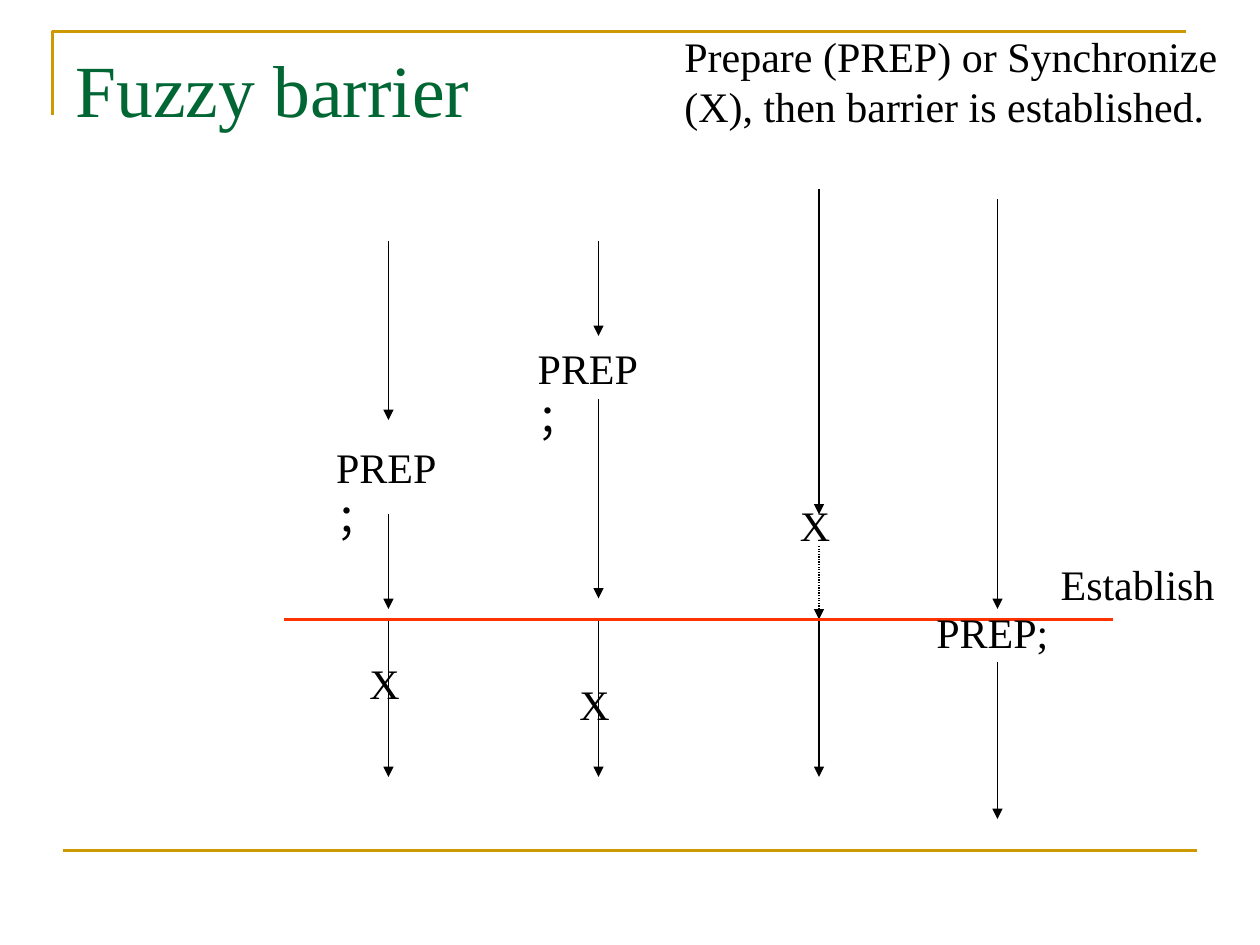
from lxml import etree
from pptx import Presentation
from pptx.dml.color import RGBColor
from pptx.enum.dml import MSO_LINE
from pptx.enum.shapes import MSO_CONNECTOR
from pptx.enum.text import MSO_ANCHOR, PP_ALIGN
from pptx.oxml.ns import qn
from pptx.util import Pt

STRAIGHT = MSO_CONNECTOR.STRAIGHT
DOT = MSO_LINE.ROUND_DOT
TOP = MSO_ANCHOR.TOP
LEFT = PP_ALIGN.LEFT

FONT = "Times New Roman"
HEX = {"gold": "CC9900", "green": "006633", "black": "000000", "red": "FF3300"}

TITLE = ("Fuzzy barrier", 36, 21.6, 648, 90)
FRAME = [(30, 66), (30, 18), (678, 18)]
FOOT = (36, 486, 684, 486)
WALL = 354
THREADS = [
    (222, [(138, 240), (294, 348), (WALL, 444)]),
    (342, [(138, 192), (228, 342), (WALL, 444)]),
    (468, [(108, 294), (WALL, 444)]),
    (570, [(114, 348), (378, 468)]),
]
WAIT = (468, 312, 468, WALL)
LABELS = [
    ("PREP；", 185, 249, 83.5, 36),
    ("PREP；", 300.2, 192, 83.5, 36),
    ("Establish", 599, 315.6, 102.2, 36),
    ("X", 204, 372, 31.7, 36),
    ("X", 450, 282, 31.7, 36),
    ("X", 324, 384, 31.7, 36),
    ("PREP;", 528, 343.2, 78.5, 36),
    ("Prepare (PREP) or Synchronize (X), then barrier is established.",
     384, 13.8, 321.8, 64.8),
]


def tint(name):
    """Return the named colour."""
    return RGBColor.from_string(HEX[name])


def write(shape, text, size=24, color="black", top=3.6):
    """Put formatted text into a shape."""
    frame = shape.text_frame
    frame.word_wrap = True
    frame.vertical_anchor = TOP
    frame.margin_top = Pt(top)
    par = frame.paragraphs[0]
    par.alignment = LEFT
    run = par.add_run()
    run.text = text
    run.font.name = FONT
    run.font.size = Pt(size)
    run.font.color.rgb = tint(color)


def draw(shapes, ends, color="black", width=0.75, head=True, dash=None):
    """Draw a straight line or arrow."""
    link = shapes.add_connector(STRAIGHT, *map(Pt, ends))
    link.line.color.rgb = tint(color)
    link.line.width = Pt(width)
    if dash:
        link.line.dash_style = dash
    if head:
        etree.SubElement(link.line._get_or_add_ln(), qn("a:tailEnd"), type="triangle")
    etree.SubElement(link._element.spPr, qn("a:effectLst"))


def main():
    """Build the slide."""
    deck = Presentation()
    deck.slide_width, deck.slide_height = Pt(720), Pt(540)
    slide = deck.slides.add_slide(deck.slide_layouts[5])
    shapes = slide.shapes

    pen = shapes.build_freeform(*FRAME[0], scale=Pt(1))
    pen.add_line_segments(FRAME[1:], close=False)
    frame = pen.convert_to_shape()
    frame.shadow.inherit = False
    frame.fill.background()
    frame.line.color.rgb = tint("gold")
    frame.line.width = Pt(1.5)
    draw(shapes, FOOT, color="gold", width=1.5, head=False)

    text, *box = TITLE
    title = shapes.title
    title.left, title.top, title.width, title.height = map(Pt, box)
    write(title, text, size=42, color="green", top=3.6)

    for x, spans in THREADS:
        for start, end in spans:
            draw(shapes, (x, start, x, end))
    draw(shapes, WAIT, dash=DOT)
    draw(shapes, (162, WALL, 636, WALL), color="red", width=2.25, head=False)

    for text, *box in LABELS:
        write(shapes.add_textbox(*map(Pt, box)), text)

    deck.save("out.pptx")


if __name__ == "__main__":
    main()
